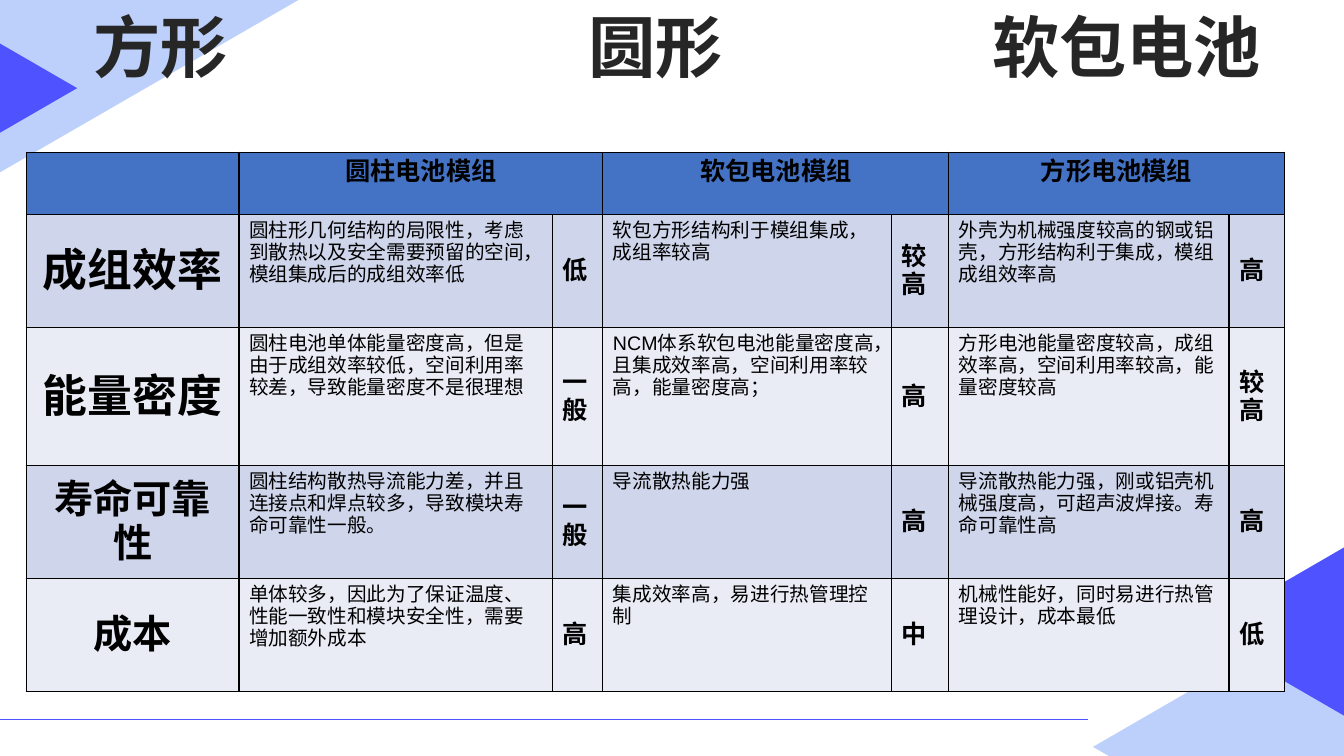
from pptx import Presentation
from pptx.dml.color import RGBColor
from pptx.enum.shapes import MSO_CONNECTOR as Connector, MSO_SHAPE as Shape
from pptx.enum.text import MSO_ANCHOR as Anchor, MSO_AUTO_SIZE as AutoSize, PP_ALIGN as Align
from pptx.oxml import parse_xml
from pptx.oxml.ns import nsdecls
from pptx.util import Inches, Pt

COLORS = {
    "pale": "BDD0FB", "accent": "4F52FF", "title": "262626", "outline": "FFFFFF",
    "text": "000000", "border": "000000", "header": "4472C4",
    "odd": "CFD5EA", "even": "E9EBF5",
}
FONT = "Arial"

# Corner decoration: polygon points, then triangles as (left, top, width, height, rotation)
POLYGONS = [
    [(13.33, 5.97), (13.33, 7.53), (11.05, 7.53), (10.84, 7.41)],
    [(-0.07, 0), (2.96, 0), (-0.07, 1.75)],
]
TRIANGLES = [(11.77, 5.51, 1.75, 1.51, 270), (-0.13, 0.46, 0.96, 0.83, 90)]
FOOTER_LINE = (0, 7.14, 10.79, 7.14)

# Titles: text, left, width
TITLES = [("方形", 0.83, 1.53), ("圆形", 5.74, 1.53), ("软包电池", 9.74, 2.87)]
TITLE_HEIGHT = 0.91

TABLE_LEFT, TABLE_TOP = 0.26, 1.51
COLUMN_WIDTHS = [2.11, 3.11, 0.5, 2.86, 0.57, 2.78, 0.55]
ROW_HEIGHTS = [0.62, 1.12, 1.37, 1.12, 1.12]
MODULES = ["圆柱电池模组", "软包电池模组", "方形电池模组"]

# Rows: criterion, its size, then a (description, rating) pair for each module
CRITERIA = [
    ("成组效率", 32, [
        ("圆柱形几何结构的局限性，考虑到散热以及安全需要预留的空间，模组集成后的成组效率低", "低"),
        ("软包方形结构利于模组集成，成组率较高", "较高"),
        ("外壳为机械强度较高的钢或铝壳，方形结构利于集成，模组成组效率高", "高"),
    ]),
    ("能量密度", 32, [
        ("圆柱电池单体能量密度高，但是由于成组效率较低，空间利用率较差，导致能量密度不是很理想", "一般"),
        ("NCM体系软包电池能量密度高，且集成效率高，空间利用率较高，能量密度高；", "高"),
        ("方形电池能量密度较高，成组效率高，空间利用率较高，能量密度较高", "较高"),
    ]),
    ("寿命可靠性", 28, [
        ("圆柱结构散热导流能力差，并且连接点和焊点较多，导致模块寿命可靠性一般。", "一般"),
        ("导流散热能力强", "高"),
        ("导流散热能力强，刚或铝壳机械强度高，可超声波焊接。寿命可靠性高", "高"),
    ]),
    ("成本", 28, [
        ("单体较多，因此为了保证温度、性能一致性和模块安全性，需要增加额外成本", "高"),
        ("集成效率高，易进行热管理控制", "中"),
        ("机械性能好，同时易进行热管理设计，成本最低", "低"),
    ]),
]

HEADER_STYLE = {"size": 18, "bold": True, "align": Align.CENTER}
CRITERION_STYLE = {"bold": True, "align": Align.CENTER, "anchor": Anchor.MIDDLE}
DESCRIPTION_STYLE = {"size": 14, "bold": False}
RATING_STYLE = {"size": 18, "bold": True, "anchor": Anchor.MIDDLE}


def color(name):
    return RGBColor.from_string(COLORS[name])


def line_xml(tag, width, name):
    return parse_xml(
        f'<a:{tag} {nsdecls("a")} w="{Pt(width)}"><a:solidFill>'
        f'<a:srgbClr val="{COLORS[name]}"/></a:solidFill></a:{tag}>')


def write(frame, text, size, bold, align=Align.LEFT, color_name="text"):
    para = frame.paragraphs[0]
    para.alignment = align
    span = para.add_run()
    span.text = text
    for name, value in {"name": FONT, "size": Pt(size), "bold": bold}.items():
        setattr(span.font, name, value)
    span.font.color.rgb = color(color_name)
    properties = span.font._element
    properties.append(parse_xml(f'<a:ea {nsdecls("a")} typeface="{FONT}"/>'))
    return properties


def paint(shape, name):
    shape.shadow.inherit = False
    shape.fill.solid()
    shape.fill.fore_color.rgb = color(name)
    shape.line.fill.background()


def add_decoration(page):
    for points, (left, top, width, height, rotation) in zip(POLYGONS, TRIANGLES):
        corners = [(Inches(x), Inches(y)) for x, y in points]
        builder = page.shapes.build_freeform(*corners[0])
        builder.add_line_segments(corners[1:], close=True)
        paint(builder.convert_to_shape(), "pale")
        triangle = page.shapes.add_shape(
            Shape.ISOSCELES_TRIANGLE, Inches(left), Inches(top), Inches(width), Inches(height))
        triangle.rotation = rotation
        paint(triangle, "accent")
    rule = page.shapes.add_connector(Connector.STRAIGHT, *map(Inches, FOOTER_LINE))
    rule.line.color.rgb = color("accent")
    rule.line.width = Pt(0.5)
    rule._element.spPr.append(parse_xml(f'<a:effectLst {nsdecls("a")}/>'))


def add_titles(page):
    for text, left, width in TITLES:
        box = page.shapes.add_textbox(Inches(left), 0, Inches(width), Inches(TITLE_HEIGHT))
        frame = box.text_frame
        frame.word_wrap = False
        frame.auto_size = AutoSize.SHAPE_TO_FIT_TEXT
        properties = write(frame, text, 48, True, Align.CENTER, "title")
        properties.insert(0, line_xml("ln", 1.06, "outline"))


def fill_cell(cell, text, size, bold, align=Align.LEFT, anchor=Anchor.TOP):
    cell.vertical_anchor = anchor
    write(cell.text_frame, text, size, bold, align)


def add_comparison(page):
    table = page.shapes.add_table(
        len(ROW_HEIGHTS), len(COLUMN_WIDTHS), Inches(TABLE_LEFT), Inches(TABLE_TOP),
        Inches(sum(COLUMN_WIDTHS)), Inches(sum(ROW_HEIGHTS))).table
    for column, width in zip(table.columns, COLUMN_WIDTHS):
        column.width = Inches(width)
    for index, (row, height) in enumerate(zip(table.rows, ROW_HEIGHTS)):
        row.height = Inches(height)
        band = "header" if index == 0 else "odd" if index % 2 else "even"
        for cell in row.cells:
            properties = cell._tc.get_or_add_tcPr()
            for side in ("lnL", "lnR", "lnT", "lnB"):
                properties.append(line_xml(side, 1, "border"))
            cell.fill.solid()
            cell.fill.fore_color.rgb = color(band)

    for index, module in enumerate(MODULES):
        first = 1 + 2 * index
        table.cell(0, first).merge(table.cell(0, first + 1))
        fill_cell(table.cell(0, first), module, **HEADER_STYLE)
    for row, (criterion, size, pairs) in enumerate(CRITERIA, 1):
        fill_cell(table.cell(row, 0), criterion, size, **CRITERION_STYLE)
        for index, (description, rating) in enumerate(pairs):
            first = 1 + 2 * index
            fill_cell(table.cell(row, first), description, **DESCRIPTION_STYLE)
            fill_cell(table.cell(row, first + 1), rating, **RATING_STYLE)


def main():
    deck = Presentation()
    deck.slide_width, deck.slide_height = Inches(13.33), Inches(7.5)
    page = deck.slides.add_slide(deck.slide_layouts[6])
    add_decoration(page)
    add_titles(page)
    add_comparison(page)
    deck.save("out.pptx")


if __name__ == "__main__":
    main()
